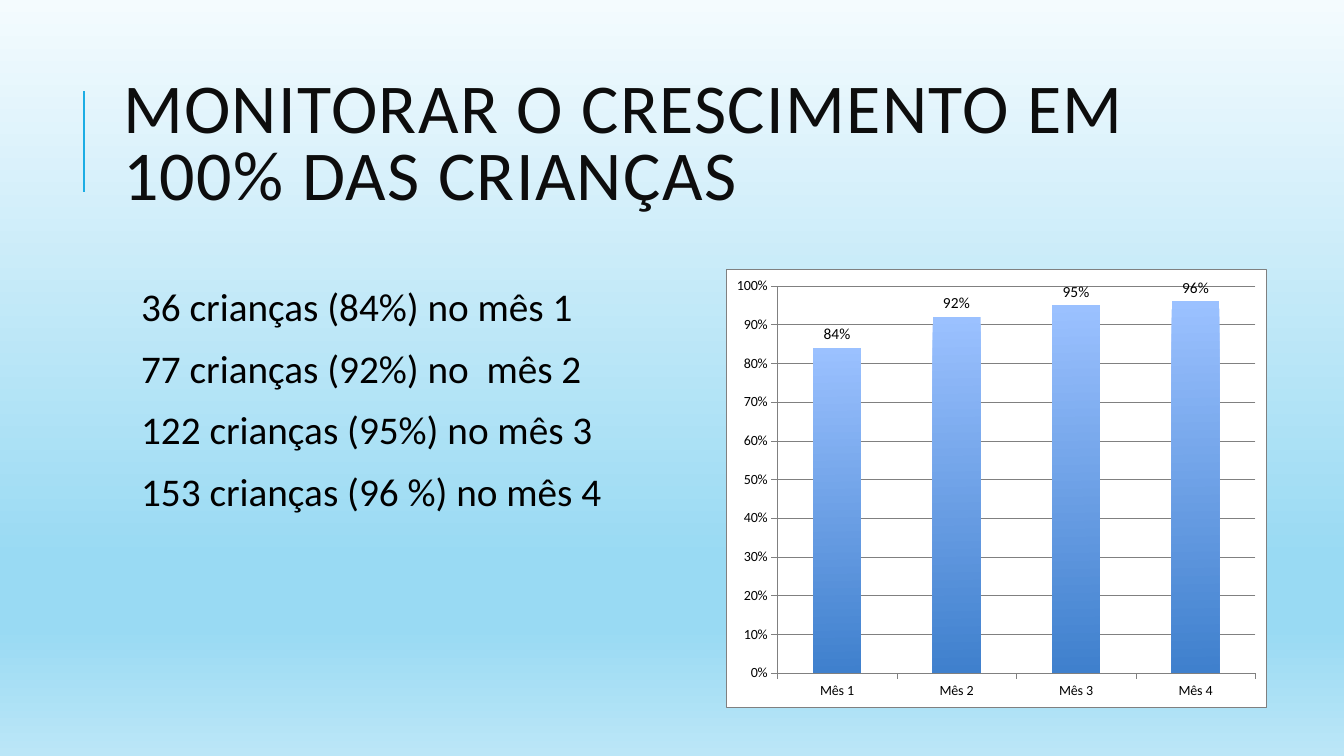
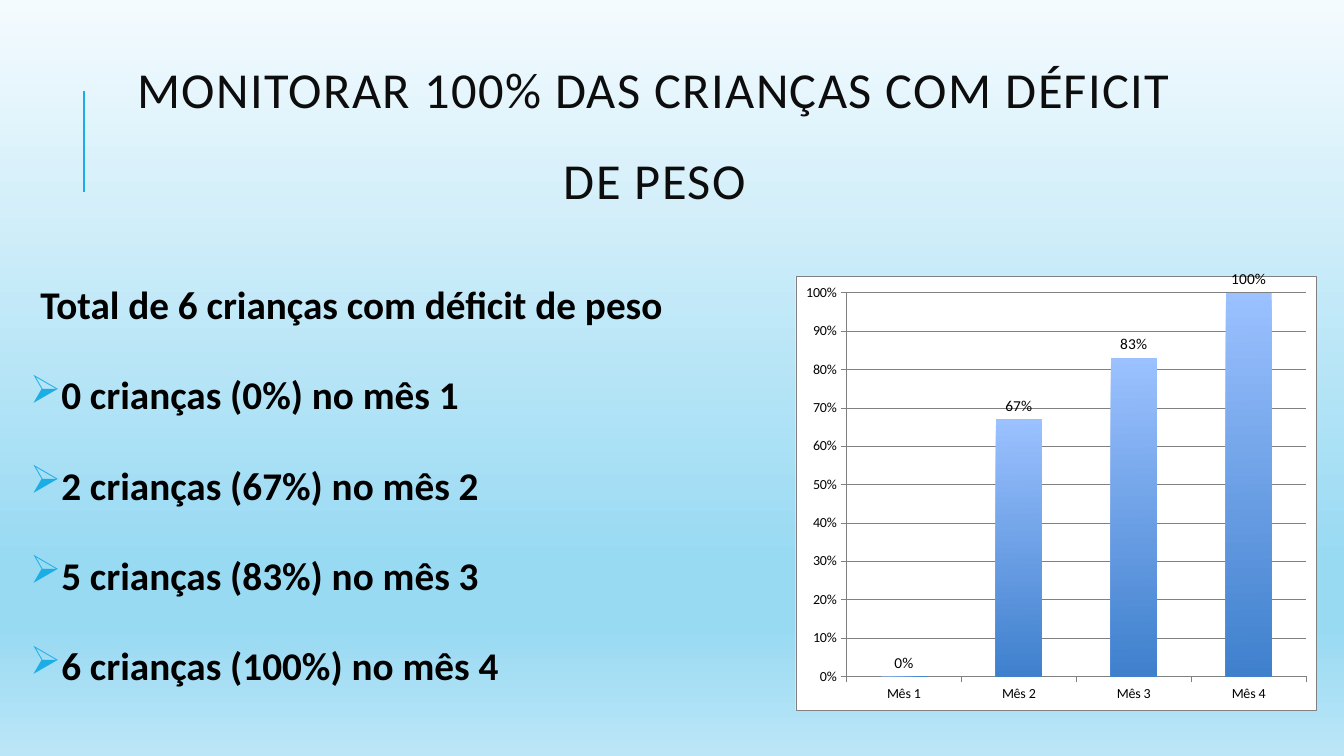
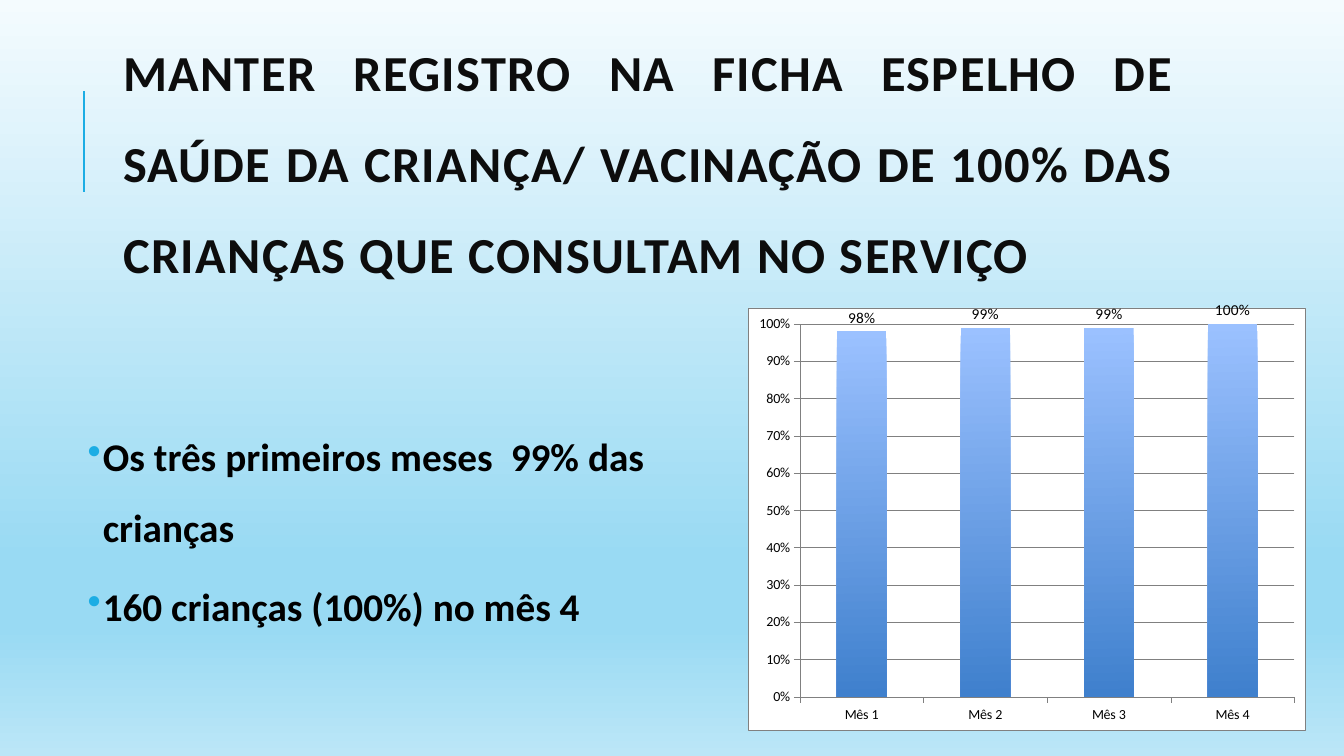
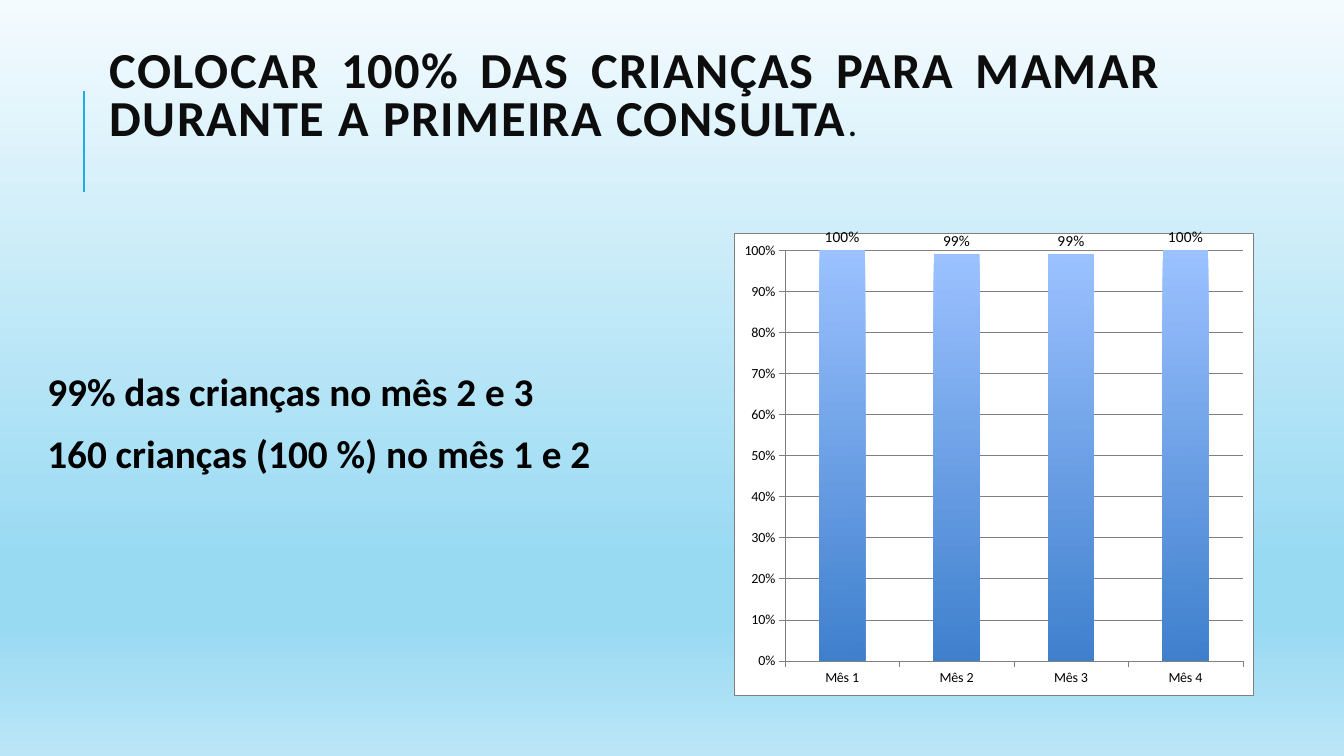
from dataclasses import dataclass

from lxml import etree
from pptx import Presentation
from pptx.chart.data import CategoryChartData
from pptx.dml.color import RGBColor
from pptx.enum.chart import XL_CHART_TYPE, XL_LABEL_POSITION, XL_TICK_MARK
from pptx.enum.shapes import MSO_CONNECTOR
from pptx.enum.text import MSO_ANCHOR, MSO_AUTO_SIZE, PP_ALIGN
from pptx.oxml import parse_xml
from pptx.oxml.ns import nsdecls, qn
from pptx.util import Inches, Pt

COLUMNS = XL_CHART_TYPE.COLUMN_CLUSTERED
OUTSIDE_END = XL_LABEL_POSITION.OUTSIDE_END
TICK_OUT = XL_TICK_MARK.OUTSIDE
STRAIGHT = MSO_CONNECTOR.STRAIGHT
MIDDLE = MSO_ANCHOR.MIDDLE
NO_AUTOFIT = MSO_AUTO_SIZE.NONE
LEFT, CENTER, JUSTIFY = PP_ALIGN.LEFT, PP_ALIGN.CENTER, PP_ALIGN.JUSTIFY

TITLE_ONLY = 5
MONTHS = ("Mês 1", "Mês 2", "Mês 3", "Mês 4")
ARROW, DOT = "➢", "•"


@dataclass(frozen=True)
class Theme:
    font: str = "Calibri"
    title: RGBColor = RGBColor(0x0D, 0x0D, 0x0D)
    text: RGBColor = RGBColor(0, 0, 0)
    accent: str = "1CADE4"
    grid: str = "808080"
    paper: str = "FFFFFF"
    sky: tuple = ((0, "F4FBFE"), (74, "99DAF3"), (83, "99DAF3"), (100, "BBE6F7"))
    column: tuple = ((0, "9BC1FF"), (100, "3F80CD"))
    title_large: int = 50
    title_size: int = 36
    body_size: int = 28
    label_size: int = 11
    axis_size: int = 10
    hairline: float = 0.25
    rule_width: float = 1.5
    letter_spacing: int = 100


THEME = Theme()


@dataclass(frozen=True)
class ListStyle:
    align: PP_ALIGN = JUSTIFY
    bold: bool = True
    line_spacing: float = 0.9
    before: int = 12
    after: int = 2
    margin: float = 0.1
    hanging: float = 0.1


def box(left, top, width, height):
    return Inches(left), Inches(top), Inches(width), Inches(height)


def paint_gradient(fill, owner, stops, angle):
    fill.gradient()
    fill.gradient_angle = 360 - angle
    stop_list = owner.find(".//" + qn("a:gsLst"))
    for stop in list(stop_list):
        stop_list.remove(stop)
    for position, color in stops:
        stop = etree.SubElement(stop_list, qn("a:gs"), pos=str(position * 1000))
        etree.SubElement(stop, qn("a:srgbClr"), val=color)


def set_font(font, size, color, bold=False):
    font.name = THEME.font
    font.size = Pt(size)
    font.bold = bold
    font.color.rgb = color


def set_hairline(line):
    line.color.rgb = RGBColor.from_string(THEME.grid)
    line.width = Pt(THEME.hairline)


def add_layout_rule(slide):
    rule = slide.shapes.add_connector(
        STRAIGHT, Inches(0.83), Inches(1.9), Inches(0.83), Inches(0.9)
    )
    rule.line.color.rgb = RGBColor.from_string(THEME.accent)
    rule.line.width = Pt(THEME.rule_width)
    etree.SubElement(rule.element.spPr, qn("a:effectLst"))
    rule.element.find(".//" + qn("p:cNvPr")).set("id", "20")
    slide.slide_layout.shapes.element.append(rule.element)


def set_title(slide, text, left, top, align, spacing, size=THEME.title_size, bold=True):
    title = slide.shapes.title
    title.left, title.top, title.width, title.height = box(left, top, 10.63, 1.64)
    frame = title.text_frame
    frame.text = text
    frame.word_wrap = True
    frame.auto_size = NO_AUTOFIT
    frame.vertical_anchor = MIDDLE
    heading = frame.paragraphs[0]
    heading.alignment = align
    heading.line_spacing = spacing
    set_font(heading.font, size, THEME.title, bold)
    title.element.find(".//" + qn("a:defRPr")).set("spc", str(THEME.letter_spacing))
    return heading


def set_bullet(paragraph, mark, style):
    properties = paragraph._p.get_or_add_pPr()
    properties.set("marL", str(Inches(style.margin)))
    properties.set("indent", str(-Inches(style.hanging) if mark else 0))
    if mark:
        color = parse_xml(
            f'<a:buClr {nsdecls("a")}><a:srgbClr val="{THEME.accent}"/></a:buClr>'
        )
        bullet = parse_xml(f'<a:buChar {nsdecls("a")} char="{mark}"/>')
        default_font = properties.find(qn("a:defRPr"))
        default_font.addprevious(color)
        default_font.addprevious(bullet)


def add_list(slide, place, items, style):
    frame = slide.shapes.add_textbox(*box(*place)).text_frame
    frame.word_wrap = True
    frame.margin_left = frame.margin_right = Inches(0.05)
    frame.margin_top = frame.margin_bottom = Inches(0.05)
    for index, (mark, text) in enumerate(items):
        item = frame.add_paragraph() if index else frame.paragraphs[0]
        item.text = text
        item.alignment = style.align
        item.line_spacing = style.line_spacing
        item.space_before = Pt(style.before)
        item.space_after = Pt(style.after)
        set_font(item.font, THEME.body_size, THEME.text, style.bold)
        set_bullet(item, mark, style)


def paper_properties(border=""):
    return parse_xml(
        f'<c:spPr {nsdecls("c", "a")}><a:solidFill><a:srgbClr val="{THEME.paper}"/>'
        f"</a:solidFill>{border}</c:spPr>"
    )


def fill_chart_area(chart):
    border = (
        f'<a:ln w="{Pt(THEME.hairline)}"><a:solidFill>'
        f'<a:srgbClr val="{THEME.grid}"/></a:solidFill></a:ln>'
    )
    body = chart.element.find(qn("c:chart"))
    body.addnext(paper_properties(border))
    body.find(qn("c:plotArea")).append(paper_properties())


def format_axes(chart):
    for axis in (chart.category_axis, chart.value_axis):
        axis.major_tick_mark = TICK_OUT
        set_font(axis.tick_labels.font, THEME.axis_size, THEME.text)
        set_hairline(axis.format.line)
    percent = chart.value_axis
    percent.minimum_scale, percent.maximum_scale, percent.major_unit = 0, 1, 0.1
    percent.tick_labels.number_format = "0%"
    percent.tick_labels.number_format_is_linked = False
    percent.has_major_gridlines = True
    set_hairline(percent.major_gridlines.format.line)


def add_coverage_chart(slide, place, shares):
    coverage = CategoryChartData(number_format="0%")
    coverage.categories = MONTHS
    coverage.add_series("Series 1", shares)
    chart = slide.shapes.add_chart(COLUMNS, *box(*place), coverage).chart
    chart.has_title = False
    chart.has_legend = False
    set_font(chart.font, THEME.label_size, THEME.text)
    format_axes(chart)

    columns = chart.plots[0]
    columns.gap_width = 150
    columns.vary_by_categories = False
    paint_gradient(columns.series[0].format.fill, chart.element, THEME.column, 89)
    columns.has_data_labels = True
    labels = columns.data_labels
    labels.show_value = True
    labels.number_format = "0%"
    labels.number_format_is_linked = False
    labels.position = OUTSIDE_END
    set_font(labels.font, THEME.label_size, THEME.text)
    fill_chart_area(chart)


def build_growth(slide):
    set_title(slide, "MONITORAR O CRESCIMENTO EM 100% DAS CRIANÇAS",
              1.12, 0.64, LEFT, 0.8, THEME.title_large, bold=False)
    add_list(slide, (1.25, 2.8, 4.88, 4.4), (
        (None, "36 crianças (84%) no mês 1"),
        (None, "77 crianças (92%) no  mês 2"),
        (None, "122 crianças (95%) no mês 3"),
        (None, "153 crianças (96 %) no mês 4"),
    ), ListStyle(bold=False))
    add_coverage_chart(slide, (7.2, 2.67, 5.36, 4.35), (0.84, 0.92, 0.95, 0.96))


def build_weight_deficit(slide):
    set_title(slide, "MONITORAR 100% DAS CRIANÇAS COM DÉFICIT DE PESO",
              1.18, 0.36, CENTER, 1.5, bold=False)
    add_list(slide, (0.25, 2.5, 7.1, 4.4), (
        (None, "Total de 6 crianças com déficit de peso"),
        (ARROW, "0 crianças (0%) no mês 1"),
        (ARROW, "2 crianças (67%) no mês 2"),
        (ARROW, "5 crianças (83%) no mês 3"),
        (ARROW, "6 crianças (100%) no mês 4"),
    ), ListStyle(line_spacing=1.5))
    add_coverage_chart(slide, (7.89, 2.68, 5.17, 4.37), (0, 0.67, 0.83, 1))


def build_vaccination(slide):
    set_title(slide, "MANTER REGISTRO NA FICHA ESPELHO DE SAÚDE DA CRIANÇA/ "
              "VACINAÇÃO DE 100% DAS CRIANÇAS QUE CONSULTAM NO SERVIÇO",
              1.12, 0.64, JUSTIFY, 1.5)
    add_list(slide, (0.48, 4.01, 5.96, 3.4), (
        (DOT, "Os três primeiros meses  99% das crianças"),
        (DOT, "160 crianças (100%) no mês 4"),
    ), ListStyle(line_spacing=1.5, before=2, after=4, margin=0.49, hanging=0.15))
    add_coverage_chart(slide, (7.42, 2.99, 5.53, 4.26), (0.98, 0.99, 0.99, 1))


def build_breastfeeding(slide):
    heading = set_title(slide, "COLOCAR 100% DAS CRIANÇAS PARA MAMAR DURANTE A "
                        "PRIMEIRA CONSULTA", 0.99, 0.15, JUSTIFY, 0.8)
    full_stop = heading.add_run()
    full_stop.text = "."
    full_stop.font.size = Pt(THEME.body_size)
    full_stop.font.bold = False
    add_list(slide, (0.32, 3.65, 5.74, 3.25), (
        (None, "99% das crianças no mês 2 e 3"),
        (None, "160 crianças (100 %) no mês 1 e 2"),
    ), ListStyle(align=LEFT))
    add_coverage_chart(slide, (7.28, 2.26, 5.15, 4.64), (1, 0.99, 0.99, 1))


def main():
    deck = Presentation()
    deck.slide_width, deck.slide_height = Inches(13.33), Inches(7.5)
    master = deck.slide_master
    paint_gradient(master.background.fill, master.element, THEME.sky, 90)
    builders = (build_growth, build_weight_deficit, build_vaccination, build_breastfeeding)
    slides = [deck.slides.add_slide(deck.slide_layouts[TITLE_ONLY]) for _ in builders]
    add_layout_rule(slides[0])
    for build, slide in zip(builders, slides):
        build(slide)
    deck.save("out.pptx")


main()
